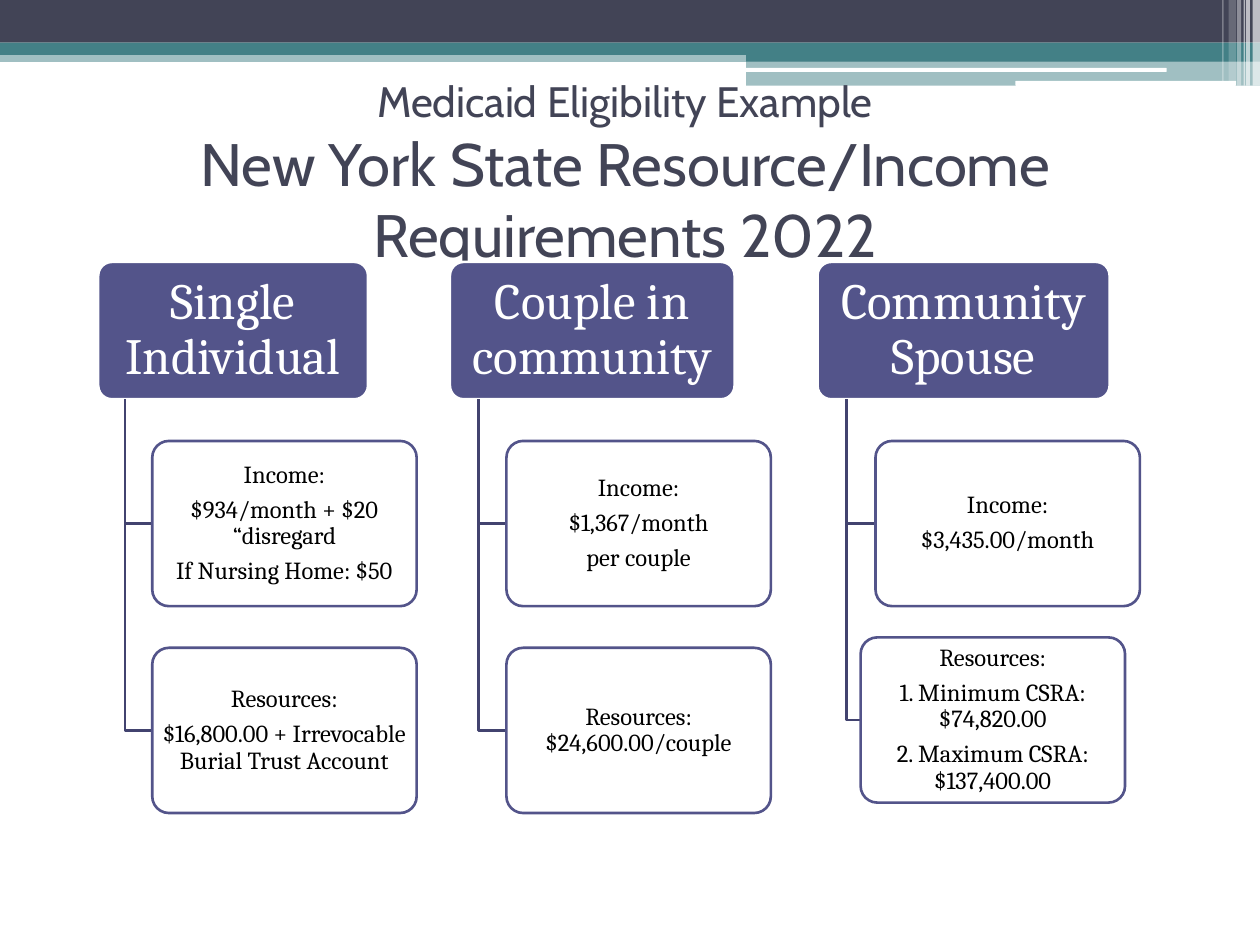
from lxml.etree import SubElement
from pptx import Presentation
from pptx.dml.color import RGBColor
from pptx.enum.shapes import MSO_SHAPE as Shape
from pptx.enum.text import MSO_ANCHOR as Anchor, PP_ALIGN as Align
from pptx.oxml.ns import qn
from pptx.util import Cm, Pt

WIDTH, HEIGHT = 25.4, 19.05
NAVY, TEAL, PURPLE, RULE, WHITE, BLACK = "424456", "438086", "53548A", "42436F", "FFFFFF", "000000"

BANDS = [
    (0, 1.02, WIDTH, 0.23, TEAL, 50),
    (0, 0, WIDTH, 0.86, NAVY, 100),
    (0, 0.86, WIDTH, 0.25, TEAL, 100),
    (15.04, 0.99, 10.36, 0.25, TEAL, 100),
    (15.04, 1.22, 10.36, 0.51, TEAL, 50),
]
HIGHLIGHTS = [(15.01, 1.37, 8.51, 0.08), (20.47, 1.63, 4.45, 0.1)]
STRIPES = [
    (25.25, 0.15, 1.73, 65),
    (25.12, 0.08, 1.73, 65),
    (25.07, 0.03, 1.73, 60),
    (24.94, 0.08, 1.73, 40),
    (24.77, 0.15, 1.63, 20),
    (24.64, 0.03, 1.63, 30),
]

TITLE = [("Medicaid Eligibility Example", 24.3),
         ("New York State Resource/Income Requirements 2022", 34.2)]

INCOME_TOP, RESOURCES_TOP = 8.89, 13.06
COLUMNS = [
    {"heading": "Single Individual", "left": 1.98, "width": 5.44, "cards": [
        (3.07, INCOME_TOP, ["Income:", "$934/month + $20 “disregard", "If Nursing Home: $50"]),
        (3.07, RESOURCES_TOP, ["Resources:", "$16,800.00 + Irrevocable Burial Trust Account"]),
    ]},
    {"heading": "Couple in community", "left": 9.07, "width": 5.74, "cards": [
        (10.21, INCOME_TOP, ["Income:", "$1,367/month", "per couple"]),
        (10.21, RESOURCES_TOP, ["Resources: $24,600.00/couple"]),
    ]},
    {"heading": "Community Spouse", "left": 16.48, "width": 5.89, "cards": [
        (17.65, INCOME_TOP, ["Income:", "$3,435.00/month"]),
        (17.35, 12.85, ["Resources:", "1. Minimum CSRA: $74,820.00", "2. Maximum CSRA: $137,400.00"]),
    ]},
]
HEADING_TOP, HEADING_HEIGHT = 5.28, 2.77
CARD_WIDTH, CARD_HEIGHT = 5.33, 3.33


def color(value):
    return RGBColor.from_string(value)


def add_block(page, kind, left, top, width, height, fill, opacity=100, line=None):
    block = page.shapes.add_shape(kind, Cm(left), Cm(top), Cm(width), Cm(height))
    block.shadow.inherit = False
    block.fill.solid()
    block.fill.fore_color.rgb = color(fill)
    if opacity < 100:
        solid = block.fill._xPr.find(qn("a:solidFill"))
        SubElement(solid[0], qn("a:alpha"), val=str(opacity * 1000))
    if line:
        block.line.color.rgb = color(line)
        block.line.width = Pt(1.5)
    else:
        block.line.fill.background()
    return block


def style_span(span, text, size, font, ink):
    span.text = text
    span.font.size = Pt(size)
    span.font.name = font
    span.font.color.rgb = color(ink)


def write(block, lines, size, ink, side, edge):
    block.adjustments[0] = 0.1
    frame = block.text_frame
    frame.word_wrap = True
    frame.vertical_anchor = Anchor.MIDDLE
    frame.margin_left = frame.margin_right = Cm(side)
    frame.margin_top = frame.margin_bottom = Cm(edge)
    for index, line in enumerate(lines):
        para = frame.add_paragraph() if index else frame.paragraphs[0]
        para.alignment = Align.CENTER
        para.line_spacing = 0.9
        para.space_after = Pt(round(size * 0.35, 1))
        style_span(para.add_run(), line, size, "Cambria", ink)


def add_elbow(page, x, top, end_x, end_y):
    builder = page.shapes.build_freeform(Cm(x), Cm(top))
    builder.add_line_segments([(Cm(x), Cm(end_y)), (Cm(end_x), Cm(end_y))], close=False)
    elbow = builder.convert_to_shape()
    elbow.shadow.inherit = False
    elbow.fill.background()
    elbow.line.color.rgb = color(RULE)
    elbow.line.width = Pt(1.5)


def add_title(page):
    box = page.shapes.add_textbox(Cm(1.27), Cm(2.11), Cm(22.66), Cm(2.74))
    frame = box.text_frame
    frame.word_wrap = True
    frame.vertical_anchor = Anchor.MIDDLE
    para = frame.paragraphs[0]
    para.alignment = Align.CENTER
    for index, (text, size) in enumerate(TITLE):
        if index:
            para.add_line_break()
        style_span(para.add_run(), text, size, "Cabin", NAVY)


def add_column(page, column):
    left, width = column["left"], column["width"]
    heading = add_block(page, Shape.ROUNDED_RECTANGLE, left, HEADING_TOP, width, HEADING_HEIGHT,
                        PURPLE, line=WHITE)
    write(heading, [column["heading"]], 29, WHITE, 0.15, 0.1)
    for card_left, card_top, lines in column["cards"]:
        add_elbow(page, left + width / 10, HEADING_TOP + HEADING_HEIGHT,
                  card_left, card_top + CARD_HEIGHT / 2)
        card = add_block(page, Shape.ROUNDED_RECTANGLE, card_left, card_top, CARD_WIDTH, CARD_HEIGHT,
                         WHITE, opacity=90, line=PURPLE)
        write(card, lines, 14, BLACK, 0.08, 0.05)


def main():
    deck = Presentation()
    deck.slide_width, deck.slide_height = Cm(WIDTH), Cm(HEIGHT)
    page = deck.slides.add_slide(deck.slide_layouts[6])
    for left, top, width, height, fill, opacity in BANDS:
        add_block(page, Shape.RECTANGLE, left, top, width, height, fill, opacity)
    for left, top, width, height in HIGHLIGHTS:
        add_block(page, Shape.ROUNDED_RECTANGLE, left, top, width, height, WHITE)
    for left, width, height, opacity in STRIPES:
        add_block(page, Shape.RECTANGLE, left, 0, width, height, WHITE, opacity)
    add_title(page)
    for column in COLUMNS:
        add_column(page, column)
    deck.save("out.pptx")


if __name__ == "__main__":
    main()
